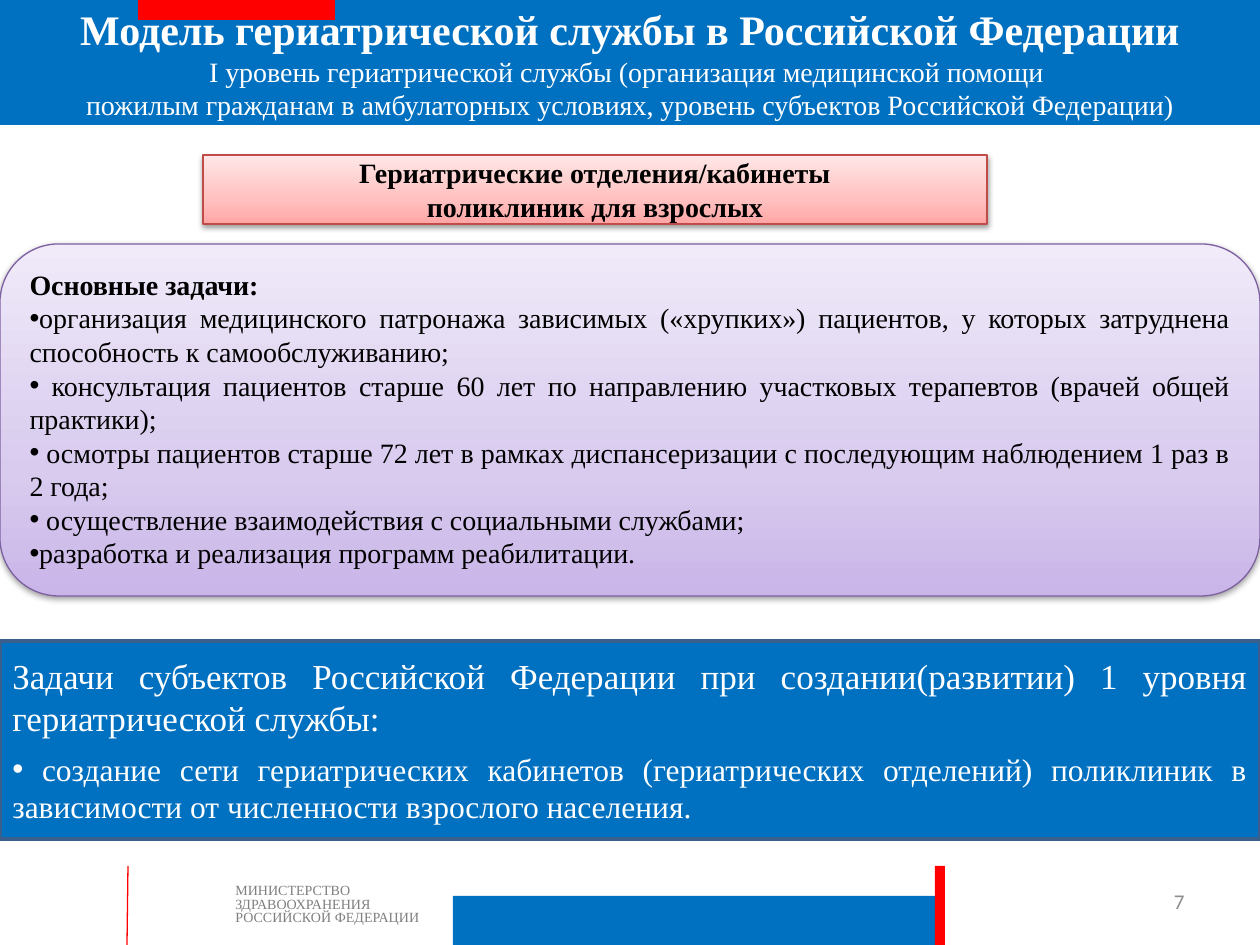
"""Build the slide on the first level of the geriatric service."""
from dataclasses import dataclass

from lxml import etree
from pptx import Presentation
from pptx import util as u
from pptx.dml.color import RGBColor
from pptx.enum import shapes, text
from pptx.oxml import parse_xml
from pptx.oxml.ns import nsdecls, qn

EMU_PER_PX = u.Inches(1) / 126
WIDTH, HEIGHT = 1260, 945
SHAPE, ALIGN, ANCHOR = shapes.MSO_SHAPE, text.PP_ALIGN, text.MSO_ANCHOR


@dataclass(frozen=True)
class Theme:
    """Colours, fonts and type sizes of the slide."""
    blue: str = "0070C0"
    red: str = "FF0000"
    white: str = "FFFFFF"
    black: str = "000000"
    grey: str = "7F7F7F"
    number_grey: str = "8C8C8C"
    blue_edge: str = "3A5F8C"
    pink_edge: str = "BF4C48"
    violet_edge: str = "7D60A0"
    pinks: tuple = ("FFA6A5", "FFC0BF", "FFE7E7")
    violets: tuple = ("C9B5E8", "D8CBEE", "F0EAF9")
    serif: str = "Times New Roman"
    sans: str = "Calibri"
    title: int = 24
    lead: int = 20
    point: int = 18
    body: int = 16
    number: int = 12
    small: int = 8


THEME = Theme()

TASKS = (
    "организация медицинского патронажа зависимых («хрупких») пациентов, "
    "у которых затруднена способность к самообслуживанию;",
    " консультация пациентов старше 60 лет по направлению участковых терапевтов "
    "(врачей общей практики);",
    " осмотры пациентов старше 72 лет в рамках диспансеризации "
    "с последующим наблюдением 1 раз в 2 года;",
    " осуществление взаимодействия с социальными службами;",
    "разработка и реализация программ реабилитации.",
)


def px(*lengths):
    """Turn pixel lengths into EMU."""
    return [u.Emu(round(length * EMU_PER_PX)) for length in lengths]


def add_box(parent, box, fill=None, edge=None, edge_width=0.75, kind=SHAPE.RECTANGLE):
    """Add a preset shape with a flat fill and an optional edge."""
    shape = parent.add_shape(kind, *px(*box))
    shape.shadow.inherit = False
    if fill:
        shape.fill.solid()
        shape.fill.fore_color.rgb = RGBColor.from_string(fill)
    if edge:
        shape.line.color.rgb = RGBColor.from_string(edge)
        shape.line.width = u.Pt(edge_width)
    else:
        shape.line.fill.background()
    return shape


def add_raised_box(parent, box, colours, edge, kind=SHAPE.RECTANGLE):
    """Add a box with an upward gradient and a soft shadow."""
    shape = add_box(parent, box, edge=edge, kind=kind)
    stops = "".join(f'<a:gs pos="{pos}"><a:srgbClr val="{colour}"/></a:gs>'
                    for pos, colour in zip((0, 35000, 100000), colours))
    gradient = parse_xml(f'<a:gradFill {nsdecls("a")} rotWithShape="1"><a:gsLst>{stops}'
                         '</a:gsLst><a:lin ang="16200000" scaled="0"/></a:gradFill>')
    properties = shape._element.spPr
    properties.find(qn("a:prstGeom")).addnext(gradient)
    properties.find(qn("a:effectLst")).append(parse_xml(
        f'<a:outerShdw {nsdecls("a")} blurRad="40000" dist="20000" dir="5400000" '
        'rotWithShape="0"><a:srgbClr val="000000"><a:alpha val="38000"/></a:srgbClr>'
        '</a:outerShdw>'))
    return shape


def add_text_box(parent, box, anchor=ANCHOR.TOP):
    """Add an empty wrapping text box and return its frame."""
    frame = parent.add_textbox(*px(*box)).text_frame
    frame.word_wrap = True
    frame.vertical_anchor = anchor
    return frame


def add_paragraph(frame, words, size, colour, align, bold=False, bullet=False,
                  before=0, font=THEME.serif):
    """Write one paragraph, using the first one while it is empty."""
    first = frame.paragraphs[0]
    paragraph = frame.add_paragraph() if first.runs else first
    paragraph.alignment = align
    if before:
        paragraph.space_before = u.Pt(before)
    if bullet:
        properties = paragraph._p.get_or_add_pPr()
        etree.SubElement(properties, qn("a:buFont"), typeface="Arial")
        etree.SubElement(properties, qn("a:buChar"), char="•")
    for index, line in enumerate(words.split("\n")):
        if index:
            paragraph.add_line_break()
        run = paragraph.add_run()
        run.text = line
        run.font.size = u.Pt(size)
        run.font.name = font
        run.font.bold = bold
        run.font.color.rgb = RGBColor.from_string(colour)
    return paragraph


def fill_title(slide):
    """Turn the title placeholder into the blue heading band."""
    title = slide.shapes.title
    title.left, title.top, title.width, title.height = px(0, 0, WIDTH, 125)
    title.fill.solid()
    title.fill.fore_color.rgb = RGBColor.from_string(THEME.blue)
    frame = title.text_frame
    frame.word_wrap = True
    frame.auto_size = text.MSO_AUTO_SIZE.NONE
    frame.vertical_anchor = ANCHOR.MIDDLE
    add_paragraph(frame, "Модель гериатрической службы в Российской Федерации",
                  THEME.title, THEME.white, ALIGN.CENTER, bold=True)
    add_paragraph(frame, "I уровень гериатрической службы (организация медицинской помощи \n"
                  "пожилым гражданам в амбулаторных условиях, "
                  "уровень субъектов Российской Федерации)",
                  THEME.body, THEME.white, ALIGN.CENTER)


def add_units(slide):
    """Add the box naming the geriatric units."""
    frame = add_raised_box(slide.shapes, (203, 155, 784, 69), THEME.pinks,
                           THEME.pink_edge).text_frame
    frame.vertical_anchor = ANCHOR.MIDDLE
    for line in ("Гериатрические отделения/кабинеты", "поликлиник для взрослых"):
        add_paragraph(frame, line, THEME.body, THEME.black, ALIGN.CENTER, bold=True)


def add_tasks(slide):
    """Add the rounded panel with the main tasks."""
    frame = add_raised_box(slide.shapes, (0, 244, WIDTH, 352), THEME.violets,
                           THEME.violet_edge, SHAPE.FLOWCHART_ALTERNATE_PROCESS).text_frame
    frame.vertical_anchor = ANCHOR.TOP
    add_paragraph(frame, "Основные задачи:", THEME.body, THEME.black, ALIGN.JUSTIFY, bold=True)
    for task in TASKS:
        add_paragraph(frame, task, THEME.body, THEME.black, ALIGN.JUSTIFY, bullet=True)


def add_regional_tasks(slide):
    """Add the blue panel with the tasks of the regions."""
    frame = add_box(slide.shapes, (0, 641, WIDTH, 198), THEME.blue,
                    THEME.blue_edge, 2).text_frame
    frame.vertical_anchor = ANCHOR.MIDDLE
    add_paragraph(frame, "Задачи субъектов Российской Федерации при создании(развитии) "
                  "1 уровня гериатрической службы:", THEME.lead, THEME.white, ALIGN.JUSTIFY)
    add_paragraph(frame, " создание сети гериатрических кабинетов (гериатрических отделений) "
                  "поликлиник в зависимости от численности взрослого населения.",
                  THEME.point, THEME.white, ALIGN.JUSTIFY, bullet=True, before=6)


def add_footer(slide):
    """Add the grouped ministry footer."""
    footer = slide.shapes.add_group_shape().shapes
    ministry = add_paragraph(add_text_box(footer, (223, 879, 228, 49)),
                             "МИНИСТЕРСТВО ЗДРАВООХРАНЕНИЯ РОССИЙСКОЙ ФЕДЕРАЦИИ",
                             THEME.small, THEME.grey, ALIGN.LEFT)
    ministry.line_spacing = 0.8
    rule = footer.add_connector(shapes.MSO_CONNECTOR.STRAIGHT, *px(128, 866, 127, HEIGHT))
    rule.line.color.rgb = RGBColor.from_string(THEME.red)
    rule.line.width = u.Pt(0.75)
    etree.SubElement(rule._element.spPr, qn("a:effectLst"))
    add_box(footer, (453, 896, 492, 49), THEME.blue)
    add_box(footer, (935, 866, 10, 79), THEME.red)


def main():
    """Build and save the slide."""
    deck = Presentation()
    deck.slide_width, deck.slide_height = px(WIDTH, HEIGHT)
    slide = deck.slides.add_slide(deck.slide_layouts[5])
    fill_title(slide)
    add_box(slide.shapes, (138, 0, 197, 20), THEME.red)
    add_paragraph(add_text_box(slide.shapes, (903, 876, 294, 50), ANCHOR.MIDDLE), "7",
                  THEME.number, THEME.number_grey, ALIGN.RIGHT, font=THEME.sans)
    add_units(slide)
    add_tasks(slide)
    add_regional_tasks(slide)
    add_footer(slide)
    deck.save("out.pptx")


if __name__ == "__main__":
    main()
